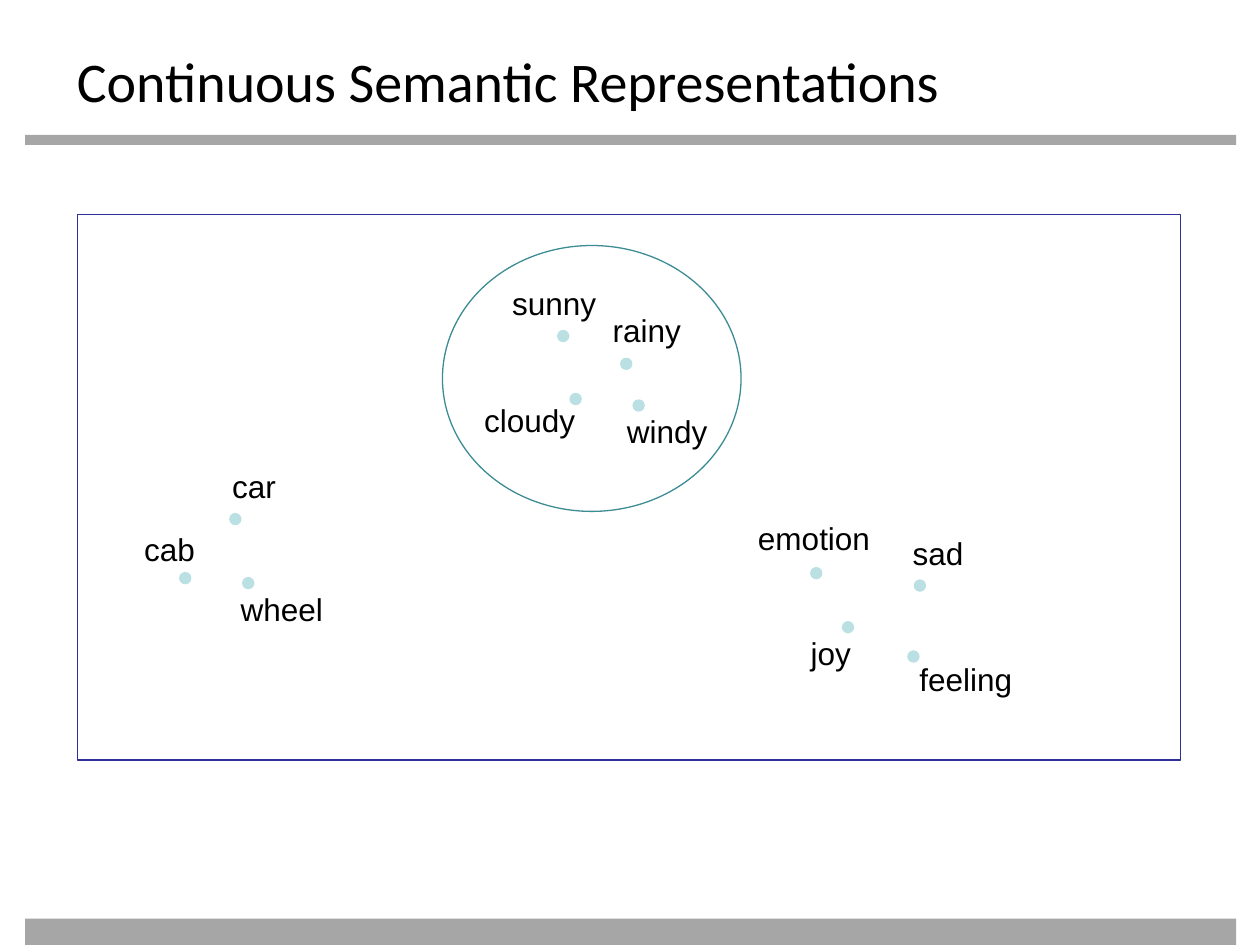
"""Build a slide that places related words close together in a semantic space."""
from pptx import Presentation
from pptx.dml.color import RGBColor
from pptx.enum.shapes import MSO_SHAPE
from pptx.enum.text import MSO_AUTO_SIZE, PP_ALIGN
from pptx.util import Cm, Pt

RECTANGLE, OVAL = MSO_SHAPE.RECTANGLE, MSO_SHAPE.OVAL
LEFT, CENTER = PP_ALIGN.LEFT, PP_ALIGN.CENTER
NO_FIT, GROW = MSO_AUTO_SIZE.NONE, MSO_AUTO_SIZE.SHAPE_TO_FIT_TEXT

COLORS = {"bar": "A6A6A6", "frame": "2F2F98", "dot": "BBE0E3",
          "cluster": "3C8C93", "text": "000000"}

TITLE = "Continuous Semantic Representations"
TITLE_BOX = (1.3, 0.71, 22.86, 1.4)
BARS = [(0.51, 2.72, 24.41, 0.2), (0.51, 18.52, 24.41, 0.53)]
FRAME = (1.57, 4.32, 22.23, 11)
WEATHER_CLUSTER = (8.92, 4.95, 6.02, 5.36)
DOT_SIZE = 0.25
LABEL_WIDTH, WIDE_LABEL_WIDTH, LABEL_HEIGHT = 2.62, 2.9, 1.02

WORDS = [
    ("sunny", (11.23, 6.65), (9.86, 5.61), LABEL_WIDTH),
    ("rainy", (12.5, 7.21), (11.73, 6.15), LABEL_WIDTH),
    ("windy", (12.75, 8.05), (12.14, 8.18), LABEL_WIDTH),
    ("cloudy", (11.48, 7.92), (9.37, 7.95), LABEL_WIDTH),
    ("car", (4.62, 10.34), (3.81, 9.3), LABEL_WIDTH),
    ("wheel", (4.88, 11.63), (4.37, 11.76), LABEL_WIDTH),
    ("cab", (3.61, 11.53), (2.11, 10.57), LABEL_WIDTH),
    ("sad", (18.42, 11.68), (17.6, 10.64), LABEL_WIDTH),
    ("joy", (16.97, 12.52), (15.44, 12.65), LABEL_WIDTH),
    ("emotion", (16.33, 11.43), (14.96, 10.34), WIDE_LABEL_WIDTH),
    ("feeling", (18.29, 13.11), (18.16, 13.18), LABEL_WIDTH),
]

TITLE_FONT = {"name": "Calibri", "size": Pt(32)}
LABEL_FONT = {"name": "Arial", "size": Pt(18)}
TITLE_FRAME = {"word_wrap": True, "auto_size": NO_FIT, "margin_top": Cm(0.23)}
LABEL_FRAME = {"word_wrap": True, "auto_size": GROW}


def set_all(target, values):
    for attribute, value in values.items():
        setattr(target, attribute, value)


def add_figure(slide, kind, box, fill=None, line=None):
    figure = slide.shapes.add_shape(kind, *map(Cm, box))
    figure.shadow.inherit = False
    if fill:
        figure.fill.solid()
        figure.fill.fore_color.rgb = RGBColor.from_string(COLORS[fill])
    else:
        figure.fill.background()
    if line:
        figure.line.color.rgb = RGBColor.from_string(COLORS[line])
        figure.line.width = Pt(0.75)
    else:
        figure.line.fill.background()


def add_text(slide, text, box, frame_format, font_format, alignment):
    frame = slide.shapes.add_textbox(*map(Cm, box)).text_frame
    set_all(frame, frame_format)
    paragraph = frame.paragraphs[0]
    paragraph.alignment = alignment
    run = paragraph.add_run()
    run.text = text
    set_all(run.font, font_format)
    run.font.color.rgb = RGBColor.from_string(COLORS["text"])


def main():
    deck = Presentation()
    deck.slide_width, deck.slide_height = Cm(25.4), Cm(19.05)
    slide = deck.slides.add_slide(deck.slide_layouts[6])

    for bar in BARS:
        add_figure(slide, RECTANGLE, bar, fill="bar")
    add_text(slide, TITLE, TITLE_BOX, TITLE_FRAME, TITLE_FONT, LEFT)
    add_figure(slide, RECTANGLE, FRAME, line="frame")
    for _, dot, _, _ in WORDS:
        add_figure(slide, OVAL, (*dot, DOT_SIZE, DOT_SIZE), fill="dot")
    for word, _, corner, width in WORDS:
        add_text(slide, word, (*corner, width, LABEL_HEIGHT),
                 LABEL_FRAME, LABEL_FONT, CENTER)
    add_figure(slide, OVAL, WEATHER_CLUSTER, line="cluster")

    deck.save("out.pptx")


if __name__ == "__main__":
    main()
